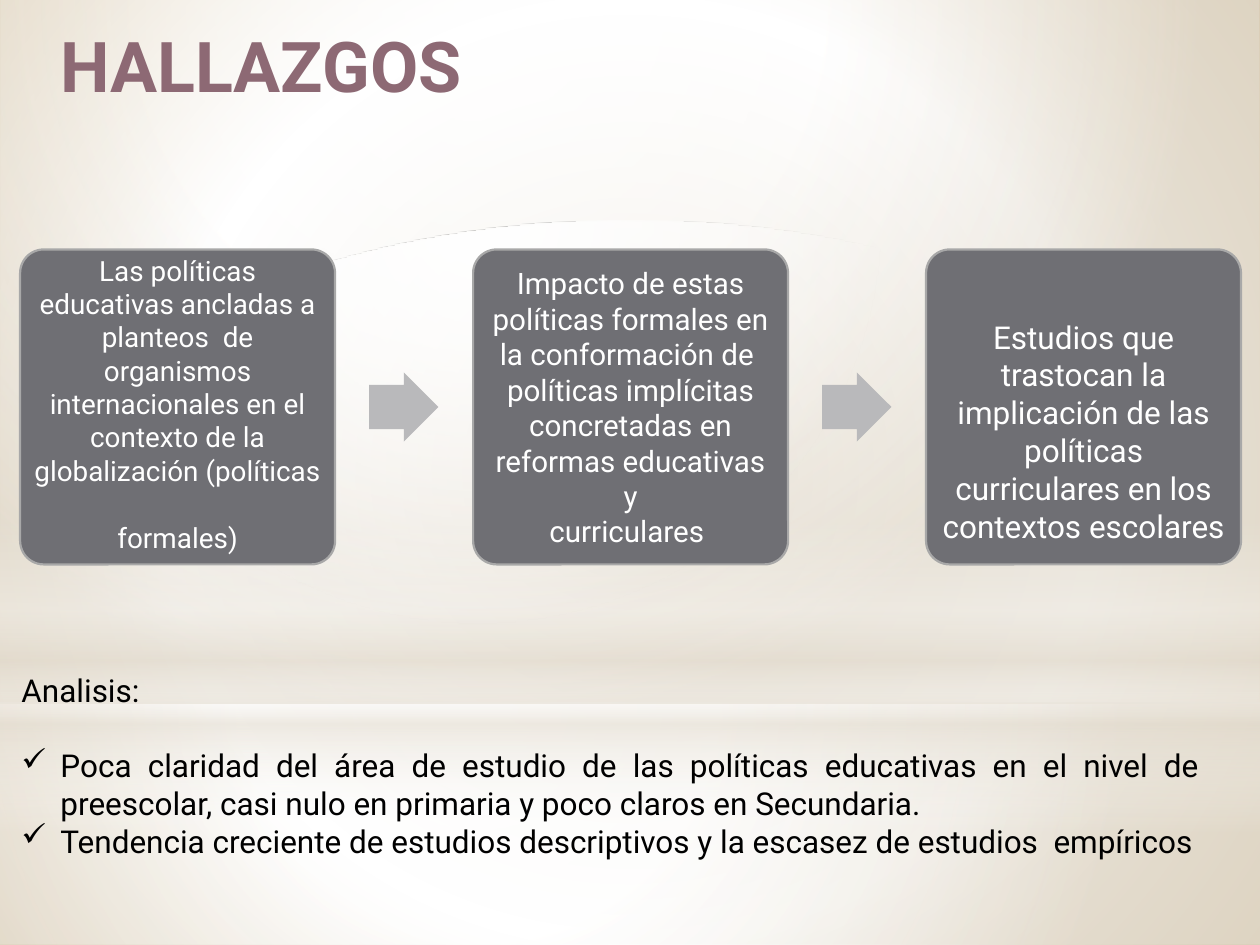
from lxml import etree
from pptx import Presentation
from pptx import util as u
from pptx.dml.color import RGBColor
from pptx.enum import shapes, text
from pptx.oxml.ns import qn

FONT = "Roboto"
COLORS = {
    "white": "FFFFFF", "black": "000000", "title": "8D6974",
    "card": "6F6F74", "edge": "A8A8A8", "arrow": "B9B9BB",
    "sand": "DFD4C1", "tan": "CCB791", "cream": "E3DCCF",
}
CENTER, GLOW = (50, 50, 50, 50), (38, -20, 62, 120)
SHAPE, ALIGN = shapes.MSO_SHAPE, text.PP_ALIGN

prs = Presentation()
prs.slide_width, prs.slide_height = u.Inches(10), u.Inches(7.5)
COL, ROW = prs.slide_width / 100, prs.slide_height / 75  # square grid units


def rgb(name):
    return RGBColor.from_string(COLORS[name])


def grid(box):
    """Turn (column, row, columns, rows) into slide lengths."""
    return [int(n * unit) for n, unit in zip(box, (COL, ROW, COL, ROW))]


def add_shape(slide, kind, box, fill, line=None):
    sp = slide.shapes.add_shape(kind, *grid(box))
    sp.shadow.inherit = False
    sp.fill.solid()
    sp.fill.fore_color.rgb = rgb(fill)
    if line:
        sp.line.color.rgb = rgb(line)
        sp.line.width = u.Pt(1.25)
    else:
        sp.line.fill.background()
    return sp


def set_gradient(props, stops, focus=None):
    """Swap a solid fill for (position, colour, opacity) stops."""
    grad = etree.Element(qn("a:gradFill"), rotWithShape="1")
    stop_list = etree.SubElement(grad, qn("a:gsLst"))
    for pos, color, opacity in stops:
        gs = etree.SubElement(stop_list, qn("a:gs"), pos=str(pos * 1000))
        clr = etree.SubElement(gs, qn("a:srgbClr"), val=COLORS[color])
        if opacity < 100:
            etree.SubElement(clr, qn("a:alpha"), val=str(opacity * 1000))
    if focus:
        route = etree.SubElement(grad, qn("a:path"), path="circle")
        sides = {k: str(n * 1000) for k, n in zip("ltrb", focus)}
        etree.SubElement(route, qn("a:fillToRect"), **sides)
    else:
        etree.SubElement(grad, qn("a:lin"), ang="5400000", scaled="0")
    solid = props.find(qn("a:solidFill"))
    props.replace(solid, grad)


def add_text(slide, box, paras, size=18, color="black", bold=False,
             align=ALIGN.LEFT, anchor=text.MSO_ANCHOR.TOP):
    tf = slide.shapes.add_textbox(*grid(box)).text_frame
    tf.word_wrap = True
    tf.vertical_anchor = anchor
    tf.margin_left = tf.margin_right = u.Inches(0.05)
    tf.margin_top = tf.margin_bottom = u.Inches(0.05)
    for i, words in enumerate(paras):
        p = tf.add_paragraph() if i else tf.paragraphs[0]
        p.alignment = align
        r = p.add_run()
        r.text = words
        r.font.name, r.font.size, r.font.bold = FONT, u.Pt(size), bold
        r.font.color.rgb = rgb(color)
    return tf


def set_check(p):
    p.alignment = ALIGN.JUSTIFY
    pPr = p._p.get_or_add_pPr()
    indent = u.Inches(0.31)
    pPr.set("marL", str(indent))
    pPr.set("indent", str(-indent))
    etree.SubElement(pPr, qn("a:buChar"), char="✓")


def add_backdrop(slide):
    slide.background.fill.solid()
    slide.background.fill.fore_color.rgb = rgb("white")
    set_gradient(slide._element.find(".//" + qn("p:bgPr")),
                 [(0, "sand", 100), (60, "white", 100), (100, "tan", 100)], CENTER)
    layers = [
        # floor, wall, horizon band, glow
        (SHAPE.RECTANGLE, (0, 55.8, 100, 19.2), GLOW,
         [(0, "white", 91), (37, "white", 76), (100, "cream", 79)]),
        (SHAPE.RECTANGLE, (0, 0, 100, 55.8), GLOW,
         [(0, "white", 89), (48, "white", 62), (100, "cream", 79)]),
        (SHAPE.RECTANGLE, (0, 41.2, 100, 25), None,
         [(0, "white", 0), (29, "white", 30), (45, "cream", 40),
          (55, "white", 26), (65, "cream", 60), (100, "white", 0)]),
        (SHAPE.OVAL, (0, 17.5, 100, 55.8), GLOW,
         [(0, "white", 100), (56, "white", 0)]),
    ]
    for kind, box, focus, stops in layers:
        sp = add_shape(slide, kind, box, "white")
        set_gradient(sp._element.spPr, stops, focus)


def add_flow(slide, box, steps):
    """Square cards spread over the box, with an arrow in each gap."""
    x, y, w, side = box
    pitch = (w - side) / (len(steps) - 1)
    arrow = 5.5
    for i, (paras, size, top, height) in enumerate(steps):
        left = x + i * pitch
        card = add_shape(slide, SHAPE.ROUNDED_RECTANGLE, (left, y, side, side),
                         "card", "edge")
        card.adjustments[0] = 0.075
        tf = add_text(slide, (left + 0.55, y + top, side - 1.1, height), paras,
                      size=size, color="white", align=ALIGN.CENTER,
                      anchor=text.MSO_ANCHOR.MIDDLE)
        if i == 0:
            tf.paragraphs[-1].space_before = u.Pt(19.5)
        if i < len(steps) - 1:
            sp = add_shape(slide, SHAPE.RIGHT_ARROW,
                           (left + side + 2.7, y + (side - arrow) / 2, arrow, arrow),
                           "arrow")
            sp.adjustments[0] = 0.64


def add_analysis(slide, box, heading, points):
    tf = add_text(slide, box, [heading, *points])
    tf.paragraphs[0].space_after = u.Pt(21)
    for p in tf.paragraphs[1:]:
        set_check(p)


def main():
    slide = prs.slides.add_slide(prs.slide_layouts[6])
    add_backdrop(slide)

    # Each step: paragraphs, text size, text top in the card, text height
    add_flow(slide, (1.6, 19.8, 96.9, 25), [
        (["Las políticas educativas ancladas a planteos  de organismos "
          "internacionales en el contexto de la globalización (políticas",
          "formales)"], 15.9, -0.4, 25.3),
        (["Impacto de estas políticas formales en la conformación de ",
          "políticas implícitas concretadas en reformas educativas y",
          "curriculares "], 16.9, 0.9, 23.2),
        (["Estudios que trastocan la implicación de las políticas "
          "curriculares en los contextos escolares"], 18, 4.8, 19.2),
    ])

    # Title
    add_text(slide, (4.3, 1.3, 52, 7.5), ["HALLAZGOS"], size=40, color="title",
             bold=True)

    add_analysis(slide, (1.2, 52.8, 94.5, 19.2), "Analisis:", [
        "Poca claridad del área de estudio de las políticas educativas en el "
        "nivel de preescolar, casi nulo en primaria y poco claros en Secundaria.",
        "Tendencia creciente de estudios descriptivos y la escasez de estudios  "
        "empíricos",
    ])
    prs.save("out.pptx")


if __name__ == "__main__":
    main()
